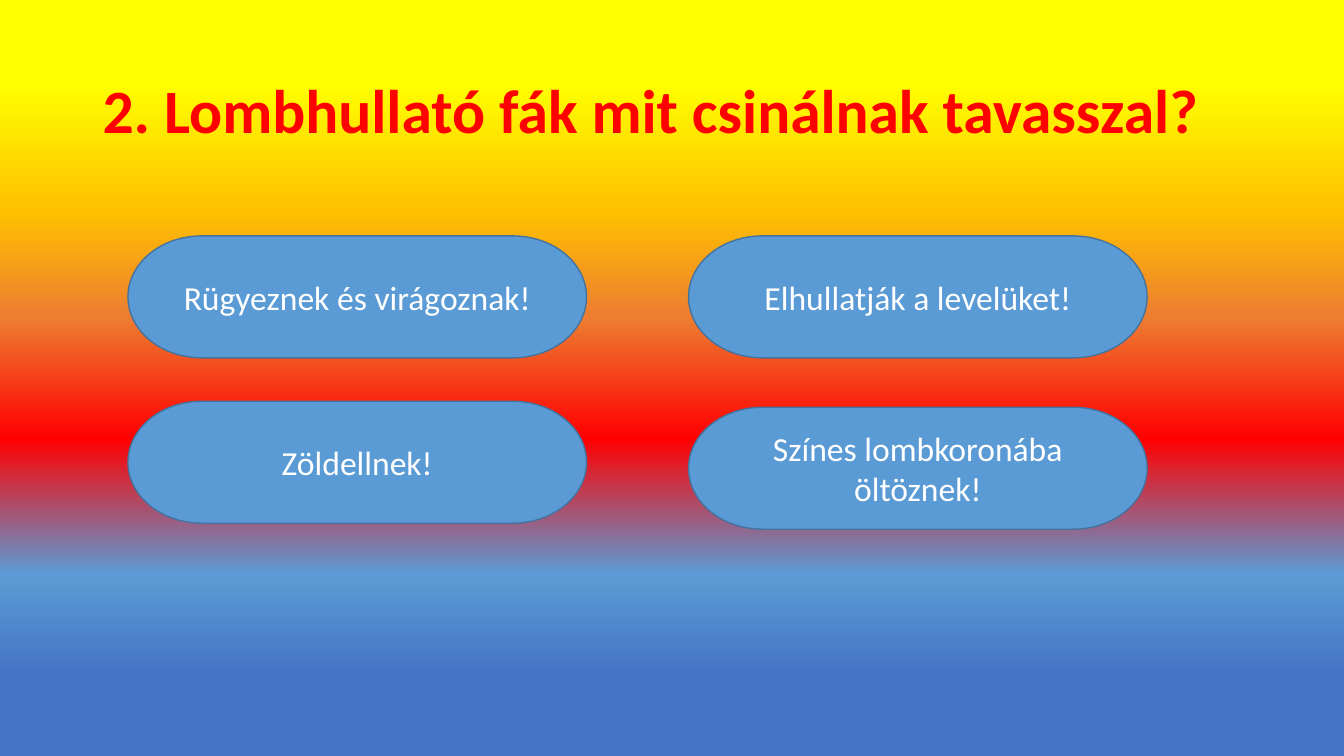
from lxml import etree
from pptx import Presentation
from pptx.dml.color import RGBColor
from pptx.enum.shapes import MSO_SHAPE
from pptx.enum.text import MSO_ANCHOR, PP_ALIGN
from pptx.oxml.ns import qn
from pptx.util import Pt

COLORS = {
    "yellow": "FFFF00",
    "gold": "FFC000",
    "orange": "ED7D31",
    "red": "FF0000",
    "sky": "5B9BD5",
    "blue": "4472C4",
    "outline": "43739E",
    "white": "FFFFFF",
}
RAINBOW = [(11, "yellow"), (28, "gold"), (42, "orange"),
           (58, "red"), (76, "sky"), (90, "blue")]
ANSWER_WIDTH, ANSWER_HEIGHT = 327.6, 87.1
LEFT_COLUMN, RIGHT_COLUMN = 91.4, 491.8
ANSWERS = [
    ("Rügyeznek és virágoznak!", LEFT_COLUMN, 168.5),
    ("Elhullatják a levelüket!", RIGHT_COLUMN, 168.5),
    ("Zöldellnek!", LEFT_COLUMN, 286.6),
    ("Színes lombkoronába öltöznek!", RIGHT_COLUMN, 290.9),
]


def rgb(name):
    return RGBColor.from_string(COLORS[name])


def write(frame, text, size, color):
    """Fill a frame with one vertically centred paragraph and return it."""
    frame.word_wrap = True
    frame.vertical_anchor = MSO_ANCHOR.MIDDLE
    paragraph = frame.paragraphs[0]
    paragraph.text = text
    paragraph.font.name = "Calibri"
    paragraph.font.size = Pt(size)
    paragraph.font.color.rgb = rgb(color)
    return paragraph


prs = Presentation()
prs.slide_width, prs.slide_height = Pt(960), Pt(540)
slide = prs.slides.add_slide(prs.slide_layouts[6])

# Background: vertical gradient, with the default stops replaced
background = slide.background.fill
background.gradient()
background.gradient_angle = 270
stops = slide.element.find(".//" + qn("a:gsLst"))
for default_stop in list(stops):
    stops.remove(default_stop)
for percent, color in RAINBOW:
    stop = etree.SubElement(stops, qn("a:gs"), pos=str(percent * 1000))
    etree.SubElement(stop, qn("a:srgbClr"), val=COLORS[color])

# Question
question_box = slide.shapes.add_textbox(Pt(66.2), Pt(28.8), Pt(828), Pt(104.4))
question = write(question_box.text_frame,
                 "2. Lombhullató fák mit csinálnak tavasszal?", 44, "red")
question.font.bold = True
question.line_spacing = 0.9

# Answers
for text, left, top in ANSWERS:
    answer = slide.shapes.add_shape(
        MSO_SHAPE.FLOWCHART_TERMINATOR,
        Pt(left), Pt(top), Pt(ANSWER_WIDTH), Pt(ANSWER_HEIGHT))
    answer.shadow.inherit = False
    answer.fill.solid()
    answer.fill.fore_color.rgb = rgb("sky")
    answer.line.color.rgb = rgb("outline")
    answer.line.width = Pt(1)
    write(answer.text_frame, text, 24, "white").alignment = PP_ALIGN.CENTER

prs.save("out.pptx")
